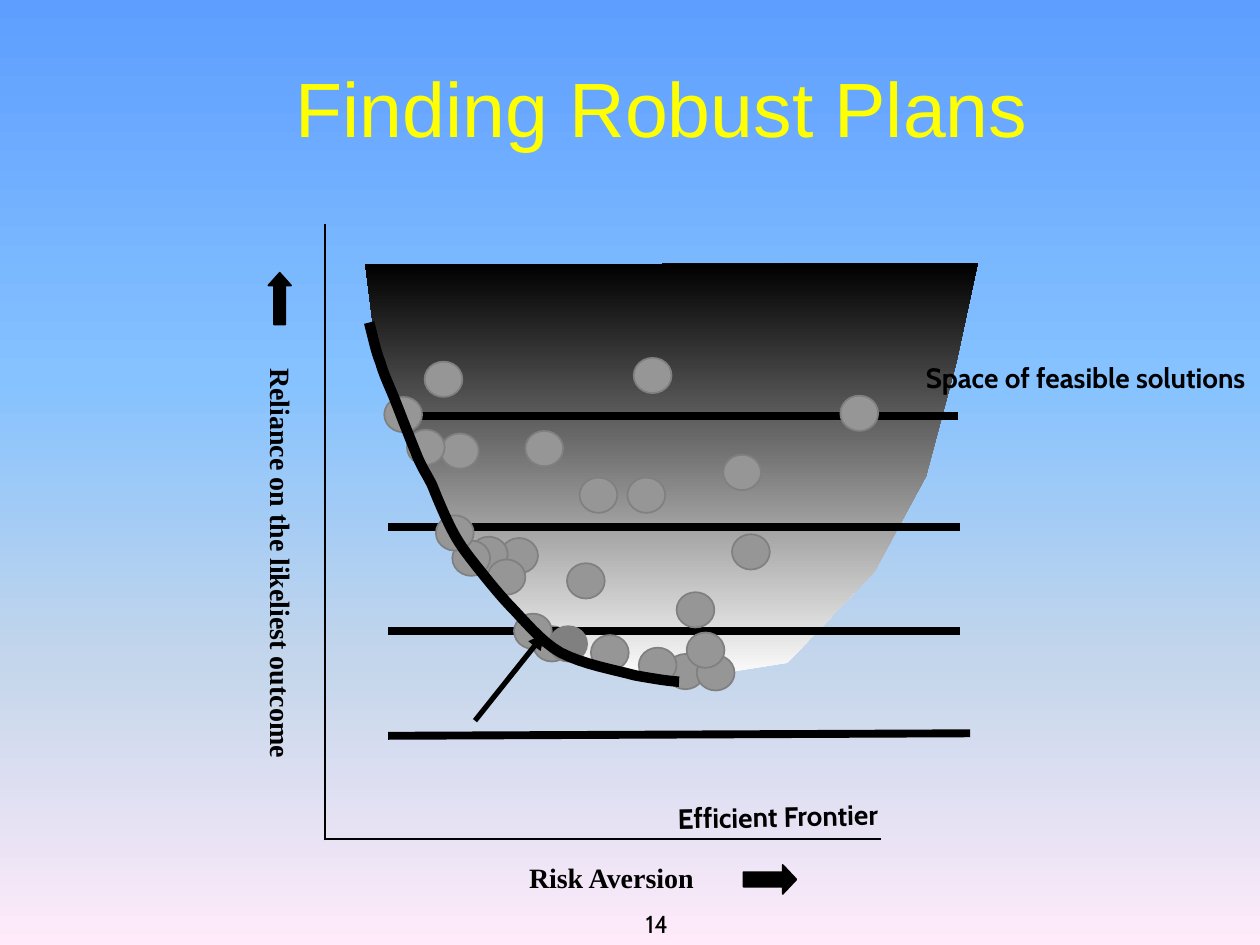
from pptx import Presentation
from pptx.dml.color import RGBColor
from pptx.enum.shapes import MSO_CONNECTOR, MSO_SHAPE
from pptx.enum.text import MSO_ANCHOR, MSO_AUTO_SIZE, PP_ALIGN
from pptx.oxml import parse_xml
from pptx.oxml.ns import nsdecls, qn
from pptx.oxml.xmlchemy import OxmlElement
from pptx.util import Inches, Pt

COLORS = {"black": "000000", "white": "FFFFFF", "title": "FFFF00",
          "dot": "969696", "dark_dot": "808080"}
SKY = [(0, "5E9EFF"), (40, "85C2FF"), (70, "C4D6EB"), (100, "FFEBFA")]
REGION = [(3.11, 3.12), (3.73, 4.4), (4.46, 5.19), (5.31, 5.41), (6.25, 5.26),
          (6.94, 4.54), (7.35, 3.78), (7.59, 2.88), (7.76, 2.09), (2.9, 2.1),
          (2.98, 2.74)]
FRONTIER_START = (2.93, 2.56)
FRONTIER_CURVES = [
    ((2.96, 2.67), (2.98, 2.78), (3.02, 2.88)),
    ((3.05, 2.98), (3.08, 3.04), (3.13, 3.16)),
    ((3.18, 3.29), (3.27, 3.52), (3.32, 3.64)),
    ((3.37, 3.75), (3.38, 3.75), (3.43, 3.85)),
    ((3.47, 3.95), (3.54, 4.12), (3.6, 4.23)),
    ((3.66, 4.34), (3.71, 4.4), (3.78, 4.49)),
    ((3.86, 4.59), (3.93, 4.68), (4.04, 4.8)),
    ((4.15, 4.91), (4.29, 5.09), (4.45, 5.18)),
    ((4.62, 5.27), (4.89, 5.32), (5.04, 5.36)),
    ((5.2, 5.39), (5.34, 5.41), (5.39, 5.41)),
]
LEVELS = [((3.08, 5.01), (7.62, 5.01)), ((3.08, 4.18), (7.62, 4.18)),
          ((3.08, 3.3), (7.6, 3.3)), ((3.08, 5.84), (7.7, 5.82))]
BACK_PLAN = (4.38, 5.11)
DARK_PLAN = (4.51, 5.11)
PLANS = [(4.23, 5.01), (4.12, 4.41), (3.88, 4.4), (3.74, 4.43), (4.02, 4.58),
         (4.65, 4.61), (5.44, 5.33), (5.96, 4.38), (3.65, 3.58), (4.84, 5.18),
         (5.18, 2.98), (5.89, 3.75), (6.82, 3.28), (3.2, 3.29), DARK_PLAN,
         (3.38, 3.55), (4.75, 3.93), (3.61, 4.23), (4.32, 3.56), (5.13, 3.93),
         (5.68, 5.34), (5.22, 5.28), (5.52, 4.84), (3.52, 3.01), (5.6, 5.16)]


def rgb(name):
    """Return the named colour."""
    return RGBColor.from_string(COLORS[name])


def curve_points(start, curves, steps=8):
    """Sample a chain of cubic curves."""
    points = [start]
    for first, second, end in curves:
        for step in range(1, steps + 1):
            t = step / steps
            points.append(tuple(
                (1 - t) ** 3 * a + 3 * (1 - t) ** 2 * t * b
                + 3 * (1 - t) * t ** 2 * c + t ** 3 * d
                for a, b, c, d in zip(start, first, second, end)))
        start = end
    return points


class PlanSlide:
    """Hold the slide and the style of its elements."""

    def __init__(self, page):
        """Keep the page to draw on."""
        self.page = page

    def gradient(self, fill, element, stops, angle):
        """Fill with a linear gradient."""
        fill.gradient()
        fill.gradient_angle = angle
        stop_list = next(element.iter(qn("a:gsLst")))
        for stop in list(stop_list):
            stop_list.remove(stop)
        for position, color in stops:
            stop_list.append(parse_xml(
                f'<a:gs {nsdecls("a")} pos="{position * 1000}">'
                f'<a:srgbClr val="{color}"/></a:gs>'))

    def format_text(self, frame, text, size, font, color, bold, align):
        """Set the text of a frame and its style."""
        frame.text = text
        paragraph = frame.paragraphs[0]
        paragraph.alignment = align
        for span in paragraph.runs:
            span.font.size = Pt(size)
            span.font.name = font
            span.font.bold = bold
            span.font.color.rgb = rgb(color)

    def title(self, text, left, top, width, height):
        """Place the title."""
        box = self.page.shapes.title
        box.left, box.top = Inches(left), Inches(top)
        box.width, box.height = Inches(width), Inches(height)
        frame = box.text_frame
        frame.auto_size = MSO_AUTO_SIZE.NONE
        frame.vertical_anchor = MSO_ANCHOR.MIDDLE
        self.format_text(frame, text, 44, "Arial", "title", False, PP_ALIGN.CENTER)

    def label(self, text, left, top, width, font, height=0.37, size=16, bold=True,
              align=PP_ALIGN.LEFT, anchor=MSO_ANCHOR.TOP, rotation=0):
        """Add a text label."""
        box = self.page.shapes.add_textbox(
            Inches(left), Inches(top), Inches(width), Inches(height))
        box.rotation = rotation
        frame = box.text_frame
        frame.word_wrap = True
        frame.margin_right = 0
        frame.vertical_anchor = anchor
        self.format_text(frame, text, size, font, "black", bold, align)

    def shape(self, kind, center, width, height, fill="black", line="black"):
        """Add a preset shape around its centre."""
        x, y = center
        shape = self.page.shapes.add_shape(
            kind, Inches(x - width / 2), Inches(y - height / 2),
            Inches(width), Inches(height))
        shape.shadow.inherit = False
        shape.fill.solid()
        shape.fill.fore_color.rgb = rgb(fill)
        shape.line.color.rgb = rgb(line)
        shape.line.width = Pt(1)
        return shape

    def plan(self, center, fill="dot"):
        """Add the dot of one plan."""
        self.shape(MSO_SHAPE.OVAL, center, 0.3, 0.28, fill, "dark_dot")

    def block_arrow(self, kind, center, width, height, head):
        """Add a block arrow with the given head length."""
        arrow = self.shape(kind, center, width, height)
        arrow.adjustments[1] = head

    def line(self, start, end, weight, arrow=False):
        """Add a straight line."""
        line = self.page.shapes.add_connector(
            MSO_CONNECTOR.STRAIGHT, *map(Inches, start + end))
        line.line.color.rgb = rgb("black")
        line.line.width = Pt(weight)
        if arrow:
            head = OxmlElement("a:tailEnd")
            head.set("type", "triangle")
            line.line._get_or_add_ln().append(head)
        line._element.spPr.append(OxmlElement("a:effectLst"))

    def outline(self, points, close):
        """Add a freeform through the points."""
        places = [(Inches(x), Inches(y)) for x, y in points]
        builder = self.page.shapes.build_freeform(*places[0])
        builder.add_line_segments(places[1:], close=close)
        shape = builder.convert_to_shape()
        shape.shadow.inherit = False
        return shape

    def region(self, points):
        """Add the shaded solution space."""
        shape = self.outline(points, True)
        stops = [(0, COLORS["white"]), (100, COLORS["black"])]
        self.gradient(shape.fill, shape._element, stops, 90)
        shape.line.fill.background()

    def frontier(self, points):
        """Add the heavy frontier curve."""
        shape = self.outline(points, False)
        shape.fill.background()
        shape.line.color.rgb = rgb("black")
        shape.line.width = Pt(6)


def main():
    """Build the slide and save it."""
    deck = Presentation()
    deck.slide_width, deck.slide_height = Inches(10), Inches(7.5)
    page = deck.slides.add_slide(deck.slide_layouts[5])
    slide = PlanSlide(page)
    slide.gradient(page.background.fill, page.element, SKY, 270)
    slide.title("Finding Robust Plans", 0.97, 0.57, 8.57, 0.55)

    slide.region(REGION)
    slide.label("Space of feasible solutions", 7.25, 2.81, 2.75, "Cabin")
    slide.plan(BACK_PLAN)
    for start, end in LEVELS:
        slide.line(start, end, 4.5)

    slide.line((6.99, 6.66), (2.57, 6.66), 1)
    slide.line((2.58, 6.67), (2.58, 1.78), 1)
    slide.label("Reliance on the likeliest outcome", 0.49, 4.38, 3.48,
                "Times New Roman", rotation=90)
    slide.block_arrow(MSO_SHAPE.UP_ARROW, (2.22, 2.37), 0.18, 0.41, 0.56)
    slide.label("Risk Aversion", 4.1, 6.78, 1.85, "Times New Roman")
    slide.block_arrow(MSO_SHAPE.RIGHT_ARROW, (6.11, 6.98), 0.42, 0.23, 0.47)

    for center in PLANS:
        slide.plan(center, "dark_dot" if center == DARK_PLAN else "dot")
    slide.label("Efficient Frontier", 5.28, 6.29, 2.26, "Cabin", rotation=-1.1)
    slide.line((3.77, 5.72), (4.32, 5.03), 3, arrow=True)
    slide.frontier(curve_points(FRONTIER_START, FRONTIER_CURVES))
    slide.label("14", 3.58, 7, 3.17, "Cabin", height=0.5, size=14, bold=False,
                align=PP_ALIGN.CENTER, anchor=MSO_ANCHOR.BOTTOM)
    deck.save("out.pptx")


if __name__ == "__main__":
    main()
